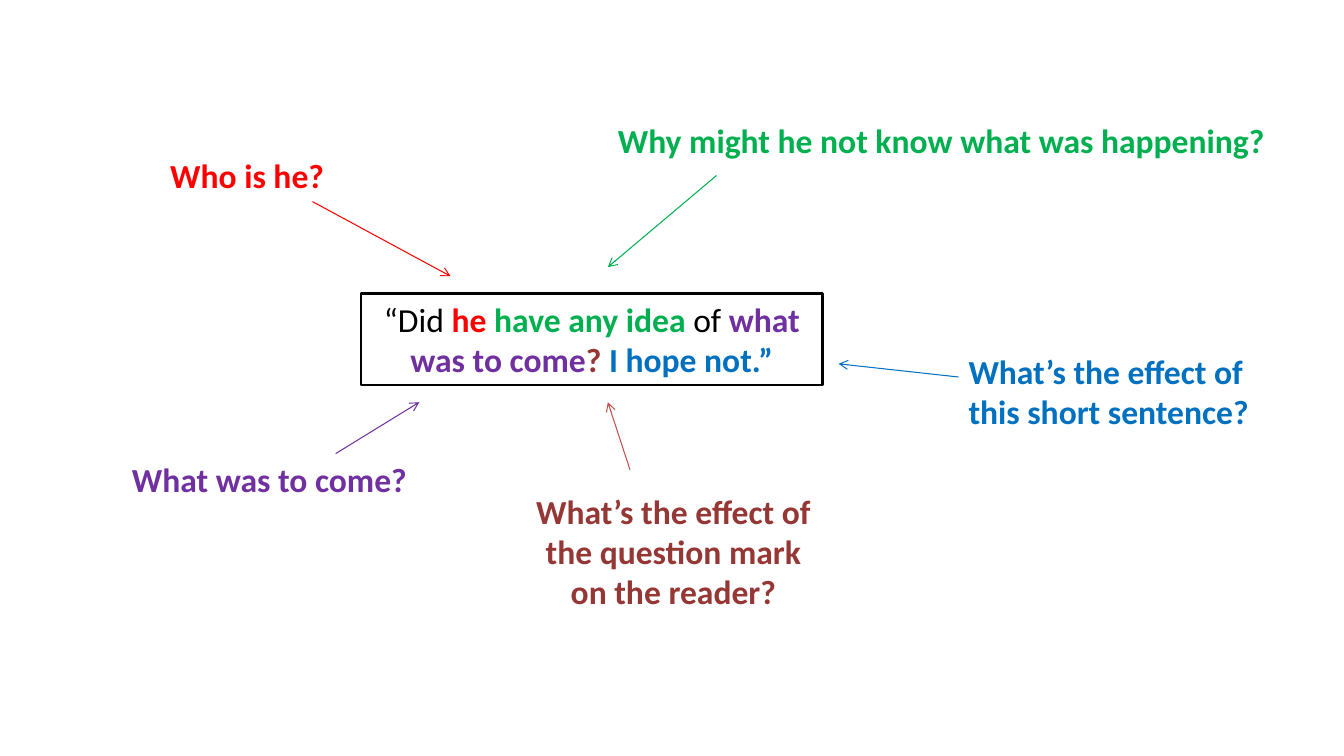
from dataclasses import dataclass

from lxml.etree import SubElement
from pptx import Presentation
from pptx.dml.color import RGBColor as Rgb
from pptx.enum.shapes import MSO_CONNECTOR as Connector, MSO_SHAPE as Preset
from pptx.enum.text import MSO_AUTO_SIZE as AutoSize, PP_ALIGN as Align
from pptx.oxml.ns import qn
from pptx.slide import Slide
from pptx.text.text import TextFrame
from pptx.util import Pt


@dataclass(frozen=True)
class Theme:
    font: str = "Calibri"
    text_size: float = 24
    border_width: float = 2
    arrow_width: float = 0.75
    paper: str = "FFFFFF"
    ink: str = "000000"
    red: str = "FF0000"
    green: str = "00B050"
    purple: str = "7030A0"
    brown: str = "953735"
    rust: str = "C0504D"
    blue: str = "0070C0"


@dataclass(frozen=True)
class Phrase:
    text: str
    color: str
    bold: bool = True


@dataclass(frozen=True)
class Question:
    phrase: Phrase
    box: tuple[float, float, float, float]
    arrow_start: tuple[float, float]
    arrow_end: tuple[float, float]
    arrow_color: str
    wrap: bool = False
    align: Align = Align.LEFT


THEME = Theme()
SLIDE_SIZE = (960, 540)
QUOTE_BOX = (257.8, 209.5, 329.8, 65.5)
QUOTE = (
    Phrase("“Did ", THEME.ink, False),
    Phrase("he ", THEME.red),
    Phrase("have any idea ", THEME.green),
    Phrase("of ", THEME.ink, False),
    Phrase("what was to come", THEME.purple),
    Phrase("? ", THEME.brown),
    Phrase("I hope not.”", THEME.blue),
)
QUESTIONS = (
    Question(Phrase("Who is he?", THEME.red),
             (114.5, 107.3, 125.3, 36.4), (223.2, 144), (321.8, 197.3), THEME.red),
    Question(Phrase("What was to come?", THEME.purple),
             (87.1, 324, 213.1, 36.4), (239.8, 324), (299.5, 287.3), THEME.purple),
    Question(Phrase("Why might he not know what was happening?", THEME.green),
             (434.2, 82.1, 481, 36.4), (511.9, 125.3), (434.2, 190.8), THEME.green),
    Question(Phrase("What’s the effect of the question mark on the reader?", THEME.brown),
             (373.7, 347, 214.6, 94.5), (450, 335.5), (434.2, 287.3), THEME.rust,
             wrap=True, align=Align.CENTER),
    Question(Phrase("What’s the effect of this short sentence?", THEME.blue),
             (684.7, 247, 216.7, 65.5), (684.7, 269.3), (599, 259.9), THEME.blue, wrap=True),
)


def write_phrases(frame: TextFrame, phrases: tuple[Phrase, ...], align: Align, wrap: bool) -> None:
    frame.word_wrap = wrap
    frame.auto_size = AutoSize.SHAPE_TO_FIT_TEXT
    paragraph = frame.paragraphs[0]
    paragraph.alignment = align
    for phrase in phrases:
        run = paragraph.add_run()
        run.text = phrase.text
        run.font.name = THEME.font
        run.font.size = Pt(THEME.text_size)
        run.font.bold = phrase.bold
        run.font.color.rgb = Rgb.from_string(phrase.color)


def draw_quote(slide: Slide) -> None:
    quote = slide.shapes.add_shape(Preset.RECTANGLE, *map(Pt, QUOTE_BOX))
    quote.shadow.inherit = False
    quote.fill.solid()
    quote.fill.fore_color.rgb = Rgb.from_string(THEME.paper)
    quote.line.color.rgb = Rgb.from_string(THEME.ink)
    quote.line.width = Pt(THEME.border_width)
    write_phrases(quote.text_frame, QUOTE, Align.CENTER, wrap=True)


def draw_question(slide: Slide, question: Question) -> None:
    label = slide.shapes.add_textbox(*map(Pt, question.box))
    write_phrases(label.text_frame, (question.phrase,), question.align, question.wrap)
    arrow = slide.shapes.add_connector(
        Connector.STRAIGHT, *map(Pt, question.arrow_start + question.arrow_end))
    arrow.line.color.rgb = Rgb.from_string(question.arrow_color)
    arrow.line.width = Pt(THEME.arrow_width)
    properties = arrow.element.spPr
    SubElement(properties.find(qn("a:ln")), qn("a:tailEnd"), type="arrow")
    SubElement(properties, qn("a:effectLst"))


def main() -> None:
    """Build a slide of questions pointing at the words of a quotation."""
    deck = Presentation()
    deck.slide_width, deck.slide_height = map(Pt, SLIDE_SIZE)
    slide = deck.slides.add_slide(deck.slide_layouts[6])
    draw_quote(slide)
    for question in QUESTIONS:
        draw_question(slide, question)
    deck.save("out.pptx")


if __name__ == "__main__":
    main()
